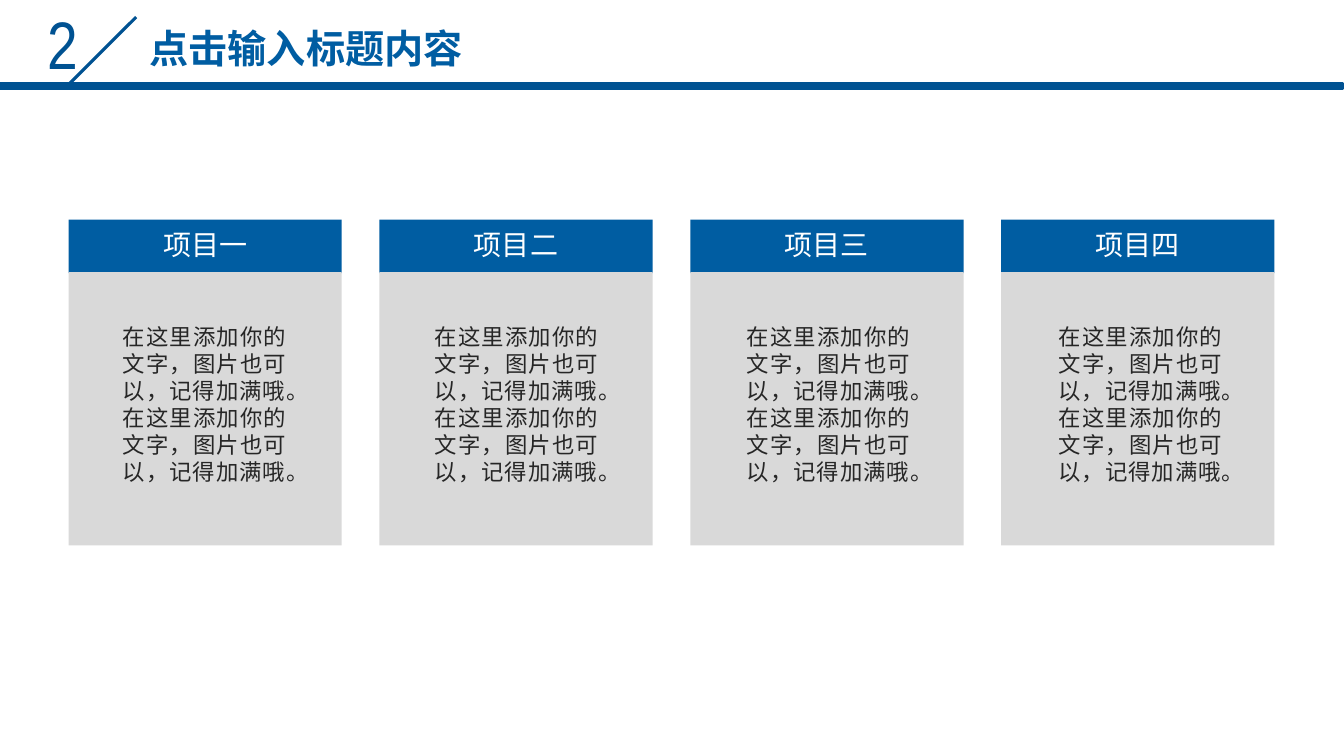
from dataclasses import dataclass

from lxml import etree
from pptx import Presentation
from pptx.dml.color import RGBColor
from pptx.enum.shapes import MSO_CONNECTOR, MSO_SHAPE
from pptx.enum.text import MSO_ANCHOR, MSO_AUTO_SIZE, PP_ALIGN
from pptx.oxml.ns import qn
from pptx.util import Inches, Pt

RECTANGLE = MSO_SHAPE.RECTANGLE
STRAIGHT = MSO_CONNECTOR.STRAIGHT
TOP = MSO_ANCHOR.TOP
NO_AUTOFIT = MSO_AUTO_SIZE.NONE
LEFT, CENTER, JUSTIFY = PP_ALIGN.LEFT, PP_ALIGN.CENTER, PP_ALIGN.JUSTIFY
TITLE_ONLY = 5


@dataclass(frozen=True)
class Theme:
    navy: str = "005292"
    blue: str = "005DA2"
    gray: str = "D9D9D9"
    dark: str = "262626"
    white: str = "FFFFFF"
    text_font: str = "Noto Sans CJK SC"
    number_font: str = "Arial Narrow"
    number_size: int = 48
    title_size: int = 28
    label_size: int = 20
    body_size: int = 16


THEME = Theme()
TITLE = "点击输入标题内容"
LABELS = ["项目一", "项目二", "项目三", "项目四"]
SENTENCE = "在这里添加你的文字，图片也可以，记得加满哦。"
BODY = SENTENCE * 2

CARD_WIDTH = 2.71
TEXT_WIDTH = 1.82


def spread(first, last, count):
    step = (last - first) / (count - 1)
    return [first + step * index for index in range(count)]


def box(left, top, width, height):
    return [Inches(value) for value in (left, top, width, height)]


def write_text(shape, text, size, color, alignment, font=THEME.text_font, bold=False):
    frame = shape.text_frame
    frame_format = {
        "word_wrap": True,
        "auto_size": NO_AUTOFIT,
        "vertical_anchor": TOP,
        "margin_left": Inches(0.1),
        "margin_right": Inches(0.1),
        "margin_top": Inches(0.05),
        "margin_bottom": Inches(0.05),
    }
    for name, value in frame_format.items():
        setattr(frame, name, value)
    paragraph = frame.paragraphs[0]
    paragraph.alignment = alignment
    run = paragraph.add_run()
    run.text = text
    for name, value in {"size": Pt(size), "bold": bold, "name": font}.items():
        setattr(run.font, name, value)
    run.font.color.rgb = RGBColor.from_string(color)
    east_asian = etree.SubElement(run.font._element, qn("a:ea"))
    east_asian.set("typeface", font)


def add_text(slide, place, *content, **options):
    write_text(slide.shapes.add_textbox(*box(*place)), *content, **options)


def add_rectangle(slide, place, color, line_width=0):
    shape = slide.shapes.add_shape(RECTANGLE, *box(*place))
    shape.shadow.inherit = False
    shape.fill.solid()
    shape.fill.fore_color.rgb = RGBColor.from_string(color)
    if line_width:
        shape.line.color.rgb = RGBColor.from_string(color)
        shape.line.width = Pt(line_width)
    else:
        shape.line.fill.background()


def add_line(slide, ends, color, width):
    line = slide.shapes.add_connector(STRAIGHT, *box(*ends))
    line.line.color.rgb = RGBColor.from_string(color)
    line.line.width = Pt(width)
    etree.SubElement(line._element.spPr, qn("a:effectLst"))


def add_title(slide, text):
    title = slide.shapes.title
    place = dict(zip(("left", "top", "width", "height"), box(1.24, 0.19, 3.59, 0.57)))
    for name, value in place.items():
        setattr(title, name, value)
    write_text(title, text, THEME.title_size, THEME.blue, CENTER, bold=True)


def add_header(slide):
    add_text(slide, (0.37, -0.03, 0.5, 0.91), "2", THEME.number_size, THEME.navy,
             LEFT, font=THEME.number_font)
    add_line(slide, (1.35, 0.17, 0.68, 0.84), THEME.navy, 2.25)
    add_rectangle(slide, (0, 0.83, 13.32, 0.05), THEME.navy, line_width=2)
    add_title(slide, TITLE)


def add_card(slide, left, text_left, label, body):
    add_rectangle(slide, (left, 2.18, CARD_WIDTH, 0.53), THEME.blue)
    add_rectangle(slide, (left, 2.7, CARD_WIDTH, 2.71), THEME.gray)
    label_left = left + (CARD_WIDTH - TEXT_WIDTH) / 2
    add_text(slide, (label_left, 2.21, TEXT_WIDTH, 0.44), label,
             THEME.label_size, THEME.white, CENTER)
    add_text(slide, (text_left, 3.16, TEXT_WIDTH, 1.72), body,
             THEME.body_size, THEME.dark, JUSTIFY)


def main():
    presentation = Presentation()
    presentation.slide_width = Inches(13.33)
    presentation.slide_height = Inches(7.5)
    slide = presentation.slides.add_slide(presentation.slide_layouts[TITLE_ONLY])
    add_header(slide)
    card_lefts = spread(0.68, 9.93, len(LABELS))
    text_lefts = spread(1.12, 10.4, len(LABELS))
    for left, text_left, label in zip(card_lefts, text_lefts, LABELS):
        add_card(slide, left, text_left, label, BODY)
    presentation.save("out.pptx")


if __name__ == "__main__":
    main()
